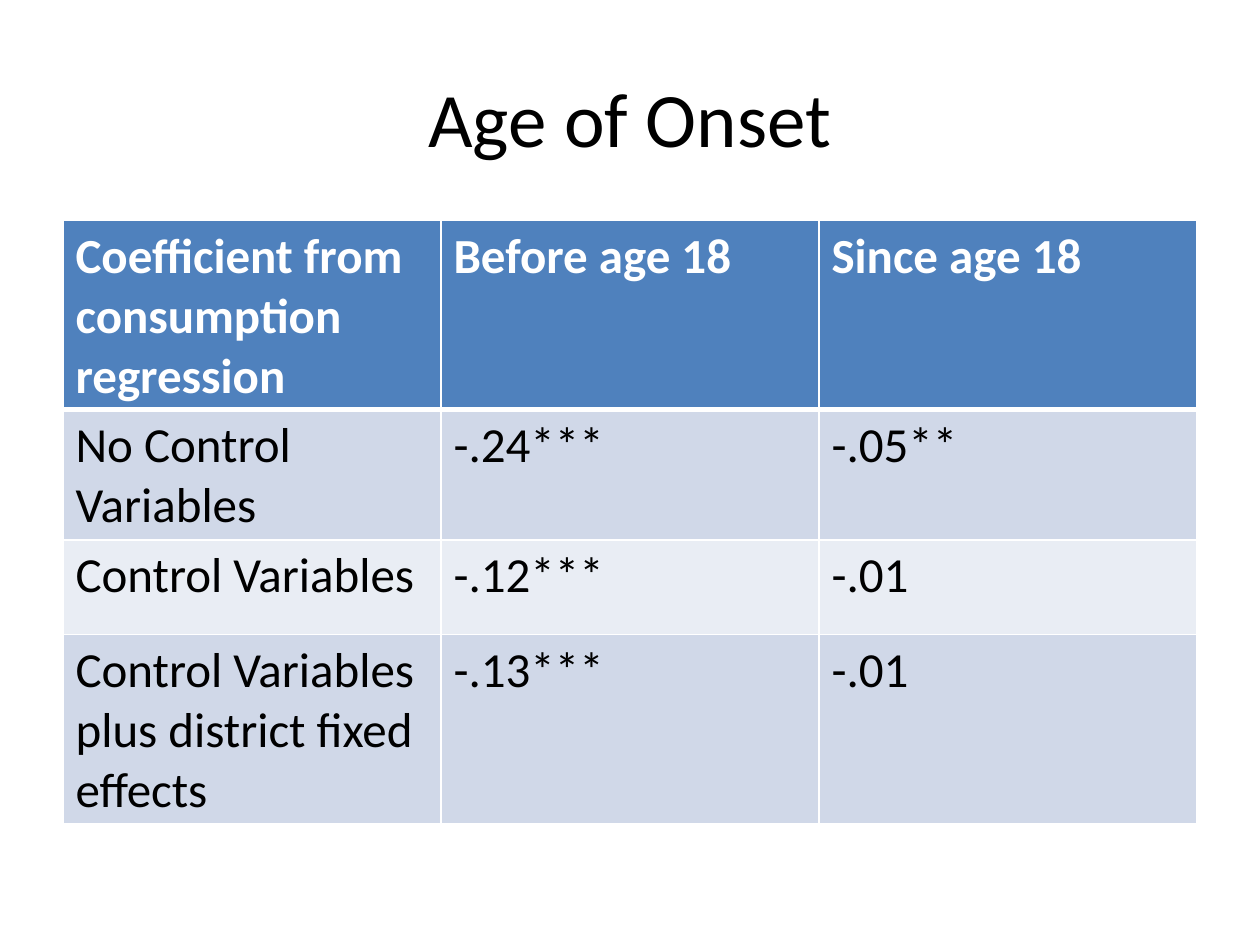
import pptx
import pptx.dml.color
import pptx.enum.text
import pptx.util
from lxml import etree

INCH = pptx.util.Inches
NS = "http://schemas.openxmlformats.org/drawingml/2006/main"
WIDE, HIGH = 10, 7.5
EDGE = WIDE * 0.05
SPAN = WIDE - 2 * EDGE
ROW = HIGH * 0.1
HEAD, BANDS = "4F81BD", ("D0D8E8", "E9EDF4")
ROWS = [
    ("Coefficient from consumption regression", "Before age 18", "Since age 18"),
    ("No Control Variables", "-.24***", "-.05**"),
    ("Control Variables", "-.12***", "-.01"),
    ("Control Variables plus district fixed effects", "-.13***", "-.01"),
]


def color(code):
    return pptx.dml.color.RGBColor.from_string(code)


def style(para, size, code, bold=False):
    font = para.font
    font.name = "Calibri"
    font.size = pptx.util.Pt(size)
    font.bold = bold
    font.color.rgb = color(code)


def add_title(slide, text):
    box = slide.shapes.add_textbox(
        INCH(EDGE), INCH(HIGH * 0.04), INCH(SPAN), INCH(1.25))
    frame = box.text_frame
    frame.word_wrap = True
    frame.vertical_anchor = pptx.enum.text.MSO_ANCHOR.MIDDLE
    para = frame.paragraphs[0]
    para.text = text
    para.alignment = pptx.enum.text.PP_ALIGN.CENTER
    style(para, 44, "000000")


def add_line(cell, side, width):
    props = cell._tc.get_or_add_tcPr()
    line = etree.SubElement(
        props, f"{{{NS}}}ln{side}", w=str(int(pptx.util.Pt(width))))
    fill = etree.SubElement(line, f"{{{NS}}}solidFill")
    etree.SubElement(fill, f"{{{NS}}}srgbClr", val="FFFFFF")


def fill_cell(cell, text, row):
    first = row == 0
    widths = {"L": 1, "R": 1, "T": 3 if row == 1 else 1, "B": 3 if first else 1}
    for side, width in widths.items():
        add_line(cell, side, width)
    cell.fill.solid()
    cell.fill.fore_color.rgb = color(HEAD if first else BANDS[(row - 1) % 2])
    cell.text = text
    style(cell.text_frame.paragraphs[0], 28, "FFFFFF" if first else "000000", first)


def add_grid(slide, rows):
    frame = slide.shapes.add_table(
        len(rows), len(rows[0]), INCH(EDGE), INCH(1.75),
        INCH(SPAN), INCH(ROW * len(rows)))
    for row, texts in enumerate(rows):
        for col, text in enumerate(texts):
            fill_cell(frame.table.cell(row, col), text, row)
    frame.height = INCH(4.78)


def main():
    deck = pptx.Presentation()
    deck.slide_width, deck.slide_height = INCH(WIDE), INCH(HIGH)
    slide = deck.slides.add_slide(deck.slide_layouts[6])
    add_title(slide, "Age of Onset")
    add_grid(slide, ROWS)
    deck.save("out.pptx")


if __name__ == "__main__":
    main()
